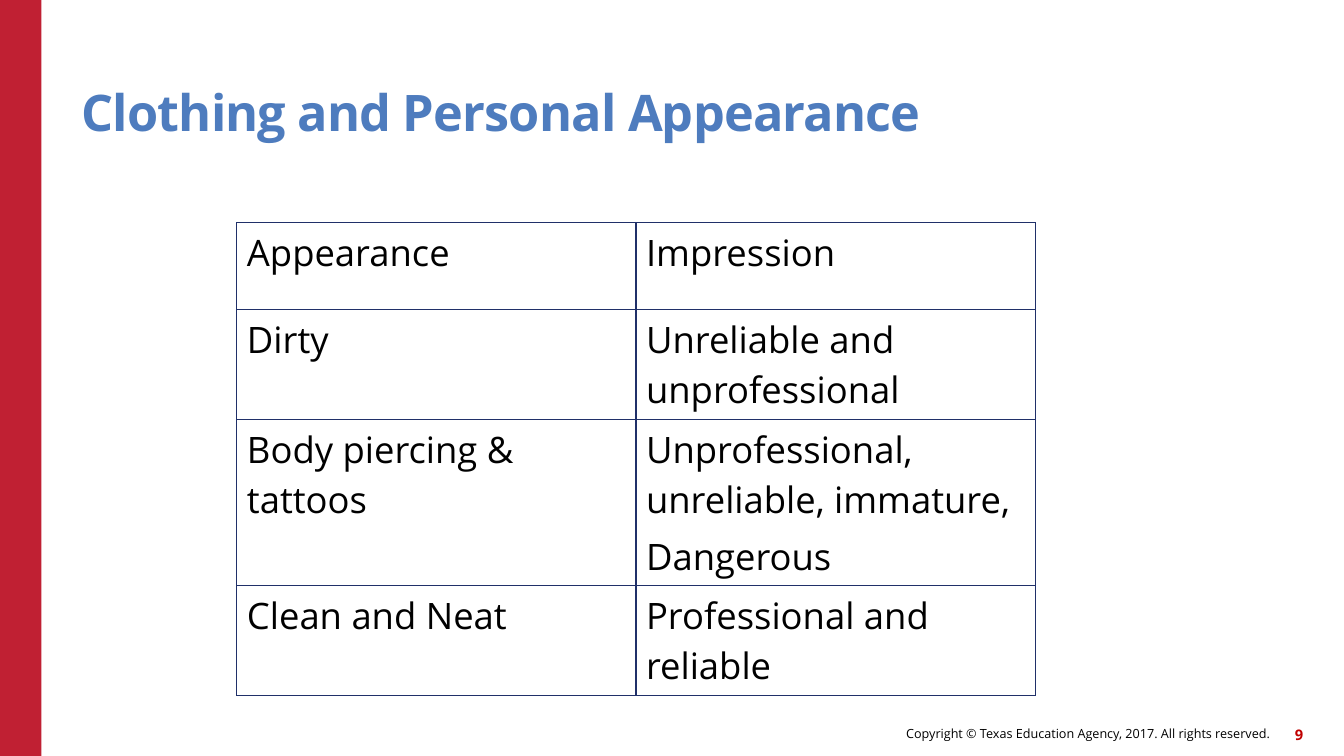
from dataclasses import dataclass

from lxml.etree import SubElement
from pptx import Presentation
from pptx.dml.color import RGBColor
from pptx.enum.shapes import MSO_SHAPE
from pptx.enum.text import MSO_ANCHOR, PP_ALIGN
from pptx.oxml.ns import qn
from pptx.slide import Slide
from pptx.table import _Cell
from pptx.text.text import _Paragraph
from pptx.util import Pt

RED = RGBColor(0xC0, 0x20, 0x33)
DARK_RED = RGBColor(0xC0, 0x00, 0x00)
BLUE = RGBColor(0x4E, 0x7C, 0xBE)
NAVY = RGBColor(0x20, 0x30, 0x69)
BLACK = RGBColor(0x00, 0x00, 0x00)
FACE = "Open Sans"


@dataclass
class Style:
    size: float
    color: RGBColor = BLACK
    bold: bool = False
    track: int = 0


@dataclass
class Label:
    text: str
    left: float
    top: float
    width: float
    height: float
    style: Style
    align: PP_ALIGN = PP_ALIGN.RIGHT
    anchor: MSO_ANCHOR = MSO_ANCHOR.MIDDLE
    pitch: float = 1.0


@dataclass
class Row:
    height: float
    look: str
    views: tuple[str, ...]


LABELS = [
    Label("Copyright © Texas Education Agency, 2017. All rights reserved.",
          442, 512.6, 465, 23, Style(9)),
    Label("9", 900.7, 513.4, 30.2, 23, Style(10.5, DARK_RED, True)),
    Label("Clothing and Personal Appearance", 58.3, 32.4, 792, 69,
          Style(36, BLUE, True, -60), PP_ALIGN.LEFT, MSO_ANCHOR.BOTTOM, 0.9),
]
ROWS = [
    Row(62, "Appearance", ("Impression",)),
    Row(78.5, "Dirty", ("Unreliable and unprofessional",)),
    Row(118.5, "Body piercing & tattoos",
        ("Unprofessional, unreliable, immature,", "Dangerous")),
    Row(78.5, "Clean and Neat", ("Professional and reliable",)),
]
BODY = Style(26)


def add_text(para: _Paragraph, text: str, style: Style) -> None:
    run = para.add_run()
    run.text = text
    font = run.font
    font.name = FACE
    font.size = Pt(style.size)
    font.bold = style.bold
    font.color.rgb = style.color
    if style.track:
        run._r.get_or_add_rPr().set("spc", str(style.track))


def add_label(slide: Slide, label: Label) -> None:
    box = slide.shapes.add_textbox(
        Pt(label.left), Pt(label.top), Pt(label.width), Pt(label.height))
    frame = box.text_frame
    frame.word_wrap = True
    frame.vertical_anchor = label.anchor
    frame.margin_left = frame.margin_right = 0
    frame.margin_top = frame.margin_bottom = 0
    para = frame.paragraphs[0]
    para.alignment = label.align
    para.line_spacing = label.pitch
    add_text(para, label.text, label.style)


def add_edges(cell: _Cell) -> None:
    props = cell._tc.get_or_add_tcPr()
    for side in ("a:lnL", "a:lnR", "a:lnT", "a:lnB"):
        line = SubElement(props, qn(side), w=str(Pt(1)))
        fill = SubElement(line, qn("a:solidFill"))
        SubElement(fill, qn("a:srgbClr"), val=str(NAVY))


def fill_cell(cell: _Cell, texts: tuple[str, ...]) -> None:
    add_edges(cell)
    cell.fill.background()
    frame = cell.text_frame
    for index, text in enumerate(texts):
        para = frame.add_paragraph() if index else frame.paragraphs[0]
        if index:
            para.space_before = Pt(5.2)
        add_text(para, text, BODY)


def add_grid(slide: Slide, rows: list[Row]) -> None:
    total = sum(row.height for row in rows)
    table = slide.shapes.add_table(
        len(rows), 2, Pt(169.2), Pt(159.1), Pt(570.2), Pt(total)).table
    table.first_row = False
    table.horz_banding = False
    for index, row in enumerate(rows):
        table.rows[index].height = Pt(row.height)
        fill_cell(table.cell(index, 0), (row.look,))
        fill_cell(table.cell(index, 1), row.views)


def add_band(slide: Slide, height: float) -> None:
    band = slide.shapes.add_shape(
        MSO_SHAPE.RECTANGLE, 0, 0, Pt(29.5), Pt(height))
    band.shadow.inherit = False
    band.fill.solid()
    band.fill.fore_color.rgb = RED
    band.line.fill.background()


def main() -> None:
    deck = Presentation()
    deck.slide_width = Pt(960)
    deck.slide_height = Pt(540)
    slide = deck.slides.add_slide(deck.slide_layouts[6])
    add_band(slide, 540)
    for label in LABELS:
        add_label(slide, label)
    add_grid(slide, ROWS)
    deck.save("out.pptx")


if __name__ == "__main__":
    main()
